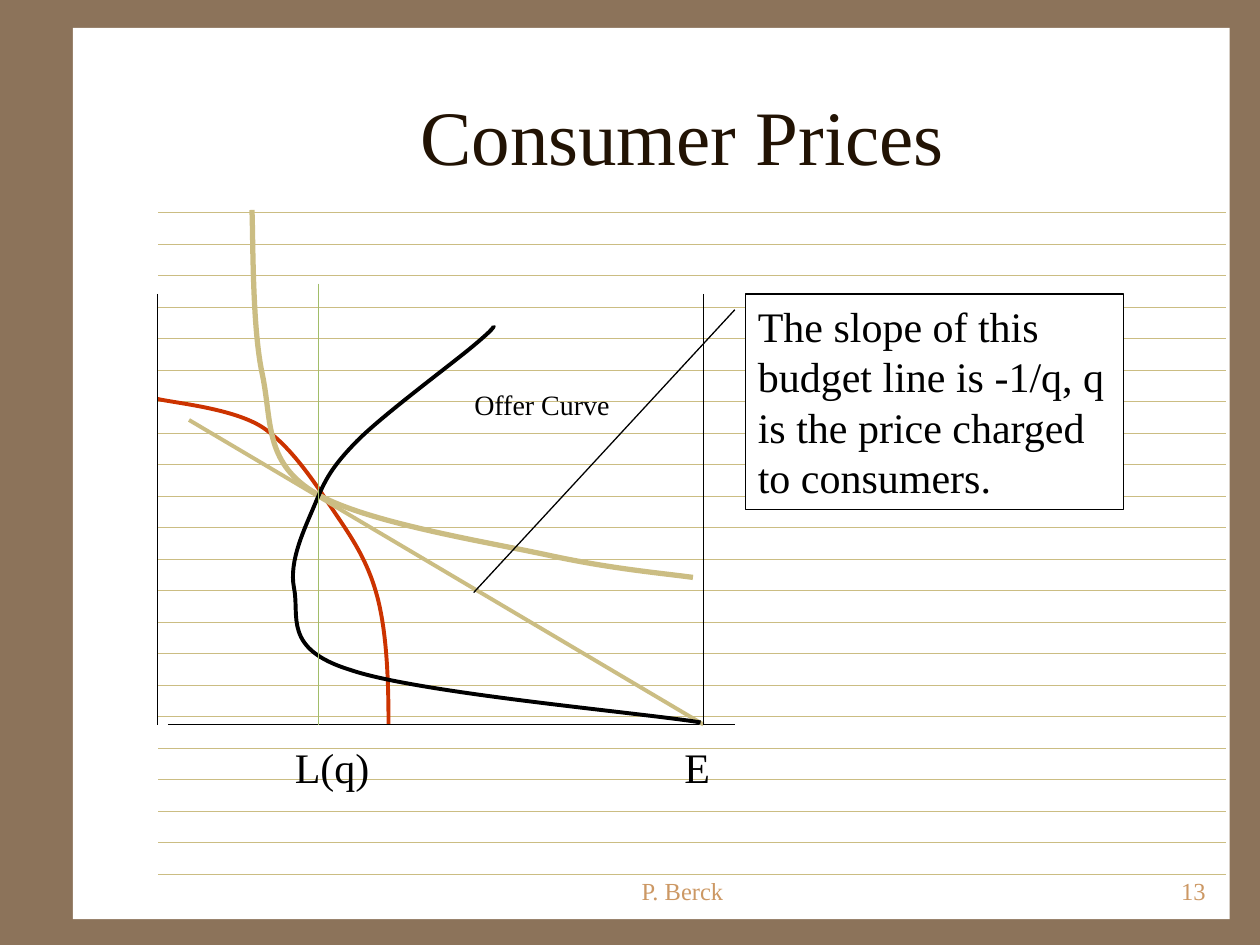
from lxml.etree import SubElement
from pptx import Presentation
from pptx.dml.color import RGBColor
from pptx.enum.shapes import MSO_CONNECTOR as LINK, MSO_SHAPE as SHAPE
from pptx.enum.text import MSO_ANCHOR as ANCHOR, PP_ALIGN as ALIGN
from pptx.oxml.ns import qn
from pptx.util import Inches, Pt

WIDE, HIGH = Inches(10), Inches(7.5)
COLS, ROWS = 120, 90
CELL = WIDE // COLS
FONT = "Times New Roman"
BROWN = RGBColor(0x8C, 0x73, 0x5A)
WHITE = RGBColor(0xFF, 0xFF, 0xFF)
BLACK = RGBColor(0x00, 0x00, 0x00)
SAND = RGBColor(0xCB, 0xBD, 0x83)
RED = RGBColor(0xCC, 0x33, 0x00)
GREEN = RGBColor(0xA1, 0xBD, 0x69)
COPPER = RGBColor(0xCC, 0x98, 0x64)
DARK = RGBColor(0x22, 0x13, 0x04)

FRONTIER = [(22, 49), (22, 44.8), (21.84, 40.5), (21, 37.1),
            (20.16, 33.8), (18.84, 31.7), (17, 29),
            (15.12, 26.2), (12.84, 22.6), (10, 20.7),
            (7.2, 18.9), (1.7, 18.4), (0, 18)]
UTILITY = [(9, 0), (9.12, 2.6), (9, 11.2), (10, 15.7),
           (10.92, 20.2), (10.2, 23.9), (14.76, 26.8),
           (19.3, 29.7), (31.3, 31.6), (37.3, 32.9),
           (43.3, 34.2), (48.1, 34.6), (51, 35)]
OFFER = [(51.72, 48.8), (46.2, 47.9), (24.72, 46), (18.36, 43.8),
         (11.88, 41.8), (13.56, 38.7), (13, 36),
         (12.48, 33.4), (14.04, 30.3), (15, 28),
         (15.96, 25.7), (16.56, 24.5), (19, 22),
         (21.48, 19.5), (27.84, 14.8), (30, 13),
         (32.16, 11.2), (32.04, 11.1), (32, 11)]


def grid(*cells):
    """Turn grid counts into slide lengths."""
    return [round(cell * CELL) for cell in cells]


def write(frame, text, size, color, align=ALIGN.LEFT):
    """Fill a text frame with one styled run."""
    para = frame.paragraphs[0]
    para.alignment = align
    run = para.add_run()
    run.text = text
    run.font.name, run.font.size = FONT, Pt(size)
    run.font.color.rgb = color
    return para


def label(slide, box, text, size, color=BLACK, align=ALIGN.LEFT, wrap=False, anchor=ANCHOR.TOP):
    """Place a text box on the grid."""
    frame = slide.shapes.add_textbox(*grid(*box)).text_frame
    frame.word_wrap, frame.vertical_anchor = wrap, anchor
    write(frame, text, size, color, align)


def stroke(slide, box, start, end, color=BLACK, width=0.75):
    """Draw a straight line between two points of a box."""
    left, top = box[:2]
    ends = grid(left + start[0], top + start[1], left + end[0], top + end[1])
    line = slide.shapes.add_connector(LINK.STRAIGHT, *ends)
    line.line.color.rgb, line.line.width = color, Pt(width)
    SubElement(line._element.spPr, qn("a:effectLst"))


def curve(slide, box, knots, color, width):
    """Draw an open chain of cubic Bezier pieces inside a box."""
    dots = [grid(box[0] + x, box[1] + y) for x, y in knots]
    pen = slide.shapes.build_freeform(*dots[0])
    pen.add_line_segments(dots[1:], close=False)
    shape = pen.convert_to_shape()
    route = shape._element.find(".//" + qn("a:path"))
    legs = route.findall(qn("a:lnTo"))
    for i in range(0, len(legs), 3):
        bend = SubElement(route, qn("a:cubicBezTo"))
        for leg in legs[i:i + 3]:
            bend.append(leg[0])
            route.remove(leg)
    shape.shadow.inherit = False
    shape.fill.background()
    shape.line.color.rgb, shape.line.width = color, Pt(width)


def paper(slide, box):
    """Lay a ruled white sheet on the brown ground."""
    slide.background.fill.solid()
    slide.background.fill.fore_color.rgb = BROWN
    sheet = slide.shapes.add_shape(SHAPE.RECTANGLE, *grid(*box))
    sheet.shadow.inherit = False
    sheet.fill.solid()
    sheet.fill.fore_color.rgb = WHITE
    sheet.line.fill.background()
    for i in range(22):
        row = 17.6 + 3 * i
        stroke(slide, box, (8.12, row), (109.8, row), SAND)


def heading(slide, box, text):
    """Fill the title placeholder and bring it above the sheet."""
    title = slide.shapes.title
    title.left, title.top, title.width, title.height = grid(*box)
    title.text_frame.vertical_anchor = ANCHOR.MIDDLE
    write(title.text_frame, text, 44, DARK, ALIGN.CENTER)
    slide.shapes._spTree.append(title._element)


def footer(slide, box):
    """Set the author and page number at the foot."""
    left, top, width, height = box
    for start, span, text, align in ((0, 38, "P. Berck", ALIGN.CENTER),
                                     (width - 25, 25, "13", ALIGN.RIGHT)):
        label(slide, (left + start, top, span, height), text, 14, COPPER, align, True, ANCHOR.BOTTOM)


def plot(slide, box):
    """Draw the axes, curves and labels of the diagram."""
    left, top, width, height = box
    edge = width - 3
    curve(slide, box, FRONTIER, RED, 2.25)
    stroke(slide, box, (1, height), (width, height))
    stroke(slide, box, (0, 8), (0, height))
    stroke(slide, box, (edge, height), (3, 20), SAND, 2.25)
    curve(slide, box, UTILITY, SAND, 3)
    curve(slide, box, OFFER, BLACK, 2.25)
    stroke(slide, box, (edge, 8), (edge, height))
    stroke(slide, box, (15.36, 7), (15.36, height), GREEN)
    for x, y, span, tall, text, size in ((29, 16.28, 15.4, 4.4, "Offer Curve", 16),
                                         (49, height + 1, 4.8, 6, "E", 24),
                                         (11.9, height + 1, 9.5, 6, "L(q)", 24)):
        label(slide, (left + x, top + y, span, tall), text, size)


def callout(slide, box, text):
    """Add a note whose leader points at the budget line."""
    note = slide.shapes.add_shape(SHAPE.LINE_CALLOUT_1, *grid(*box))
    for i, share in enumerate((0.073, -0.028, 1.387, -0.719)):
        note.adjustments[i] = share
    note.shadow.inherit = False
    note.fill.solid()
    note.fill.fore_color.rgb = WHITE
    note.line.color.rgb, note.line.width = BLACK, Pt(0.75)
    note.text_frame.word_wrap = True
    note.text_frame.vertical_anchor = ANCHOR.TOP
    write(note.text_frame, text, 24, BLACK).line_spacing = Pt(28.8)


def main():
    """Build and save the slide."""
    deck = Presentation()
    deck.slide_width, deck.slide_height = WIDE, HIGH
    slide = deck.slides.add_slide(deck.slide_layouts[5])
    paper(slide, (6.95, 2.67, COLS - 9.83, ROWS - 5.13))
    footer(slide, (46, 80.8, 70, 6))
    heading(slide, (14, 5.3, 102, 15), "Consumer Prices")
    plot(slide, (15, 20, 55, 49))
    callout(slide, (71, 28, 36, 20.5),
            "The slope of this budget line is -1/q, q is the price charged to consumers.")
    deck.save("out.pptx")


if __name__ == "__main__":
    main()
